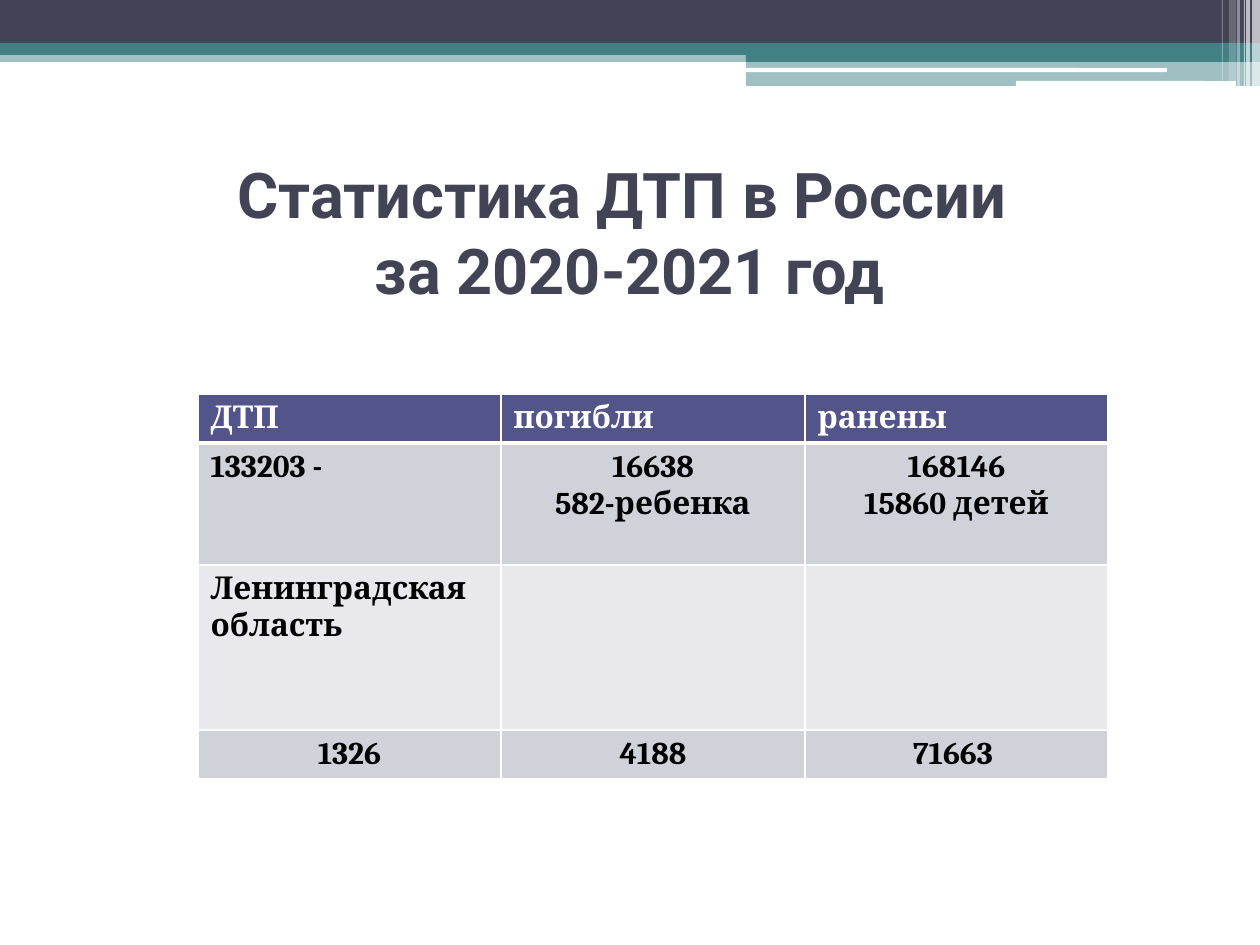
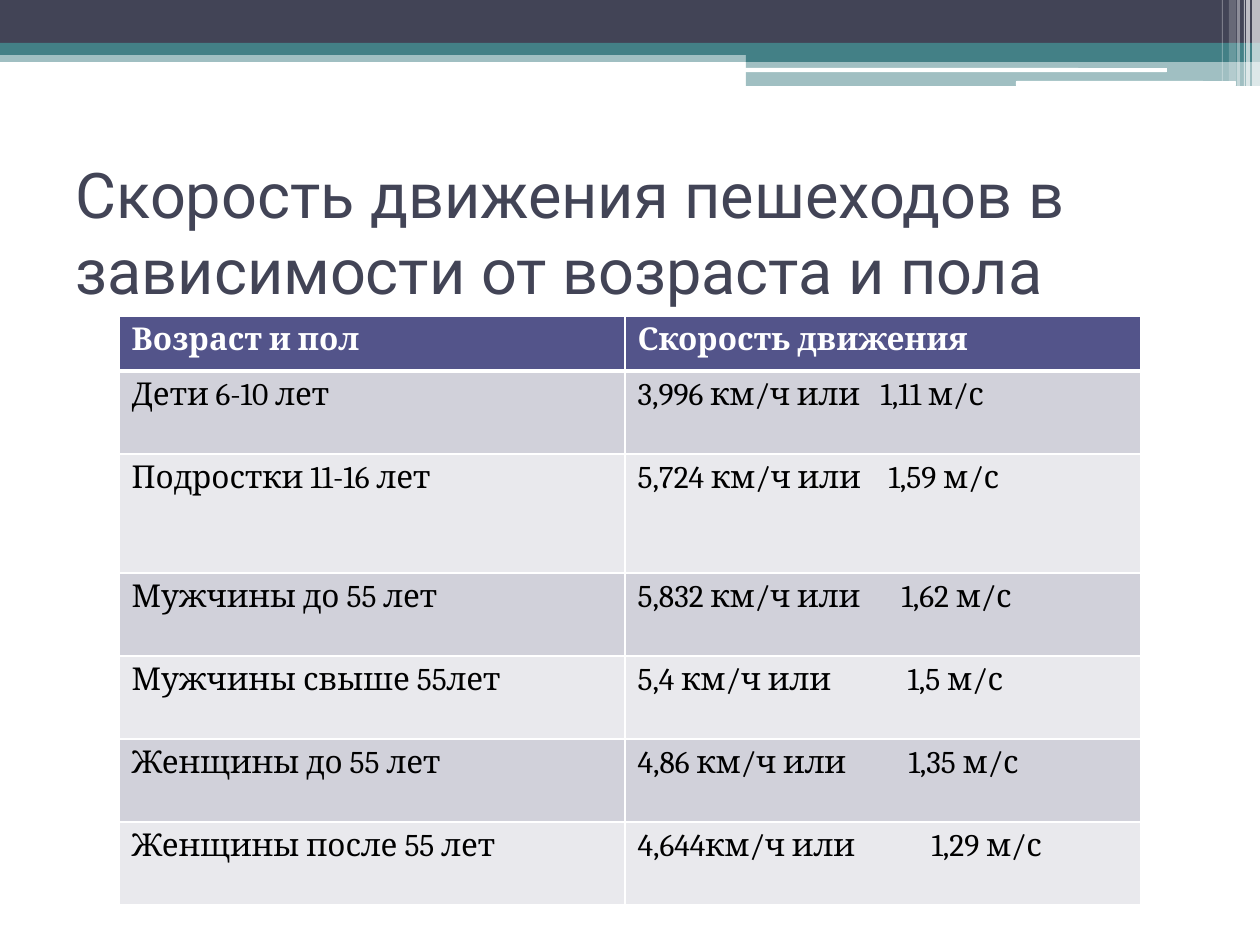
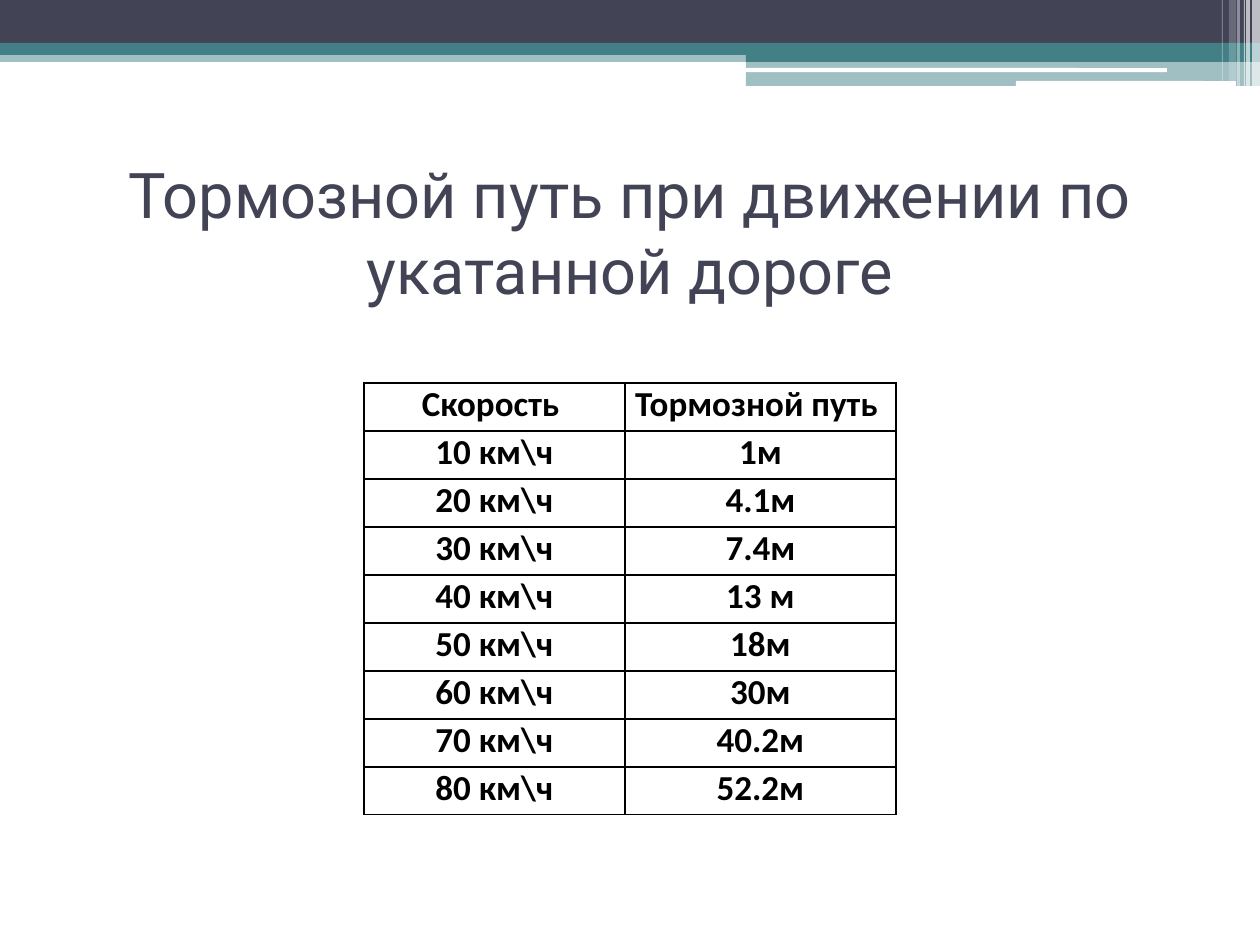
import lxml.etree
import pptx
import pptx.dml.color
import pptx.enum.shapes
import pptx.enum.text
import pptx.oxml.ns
import pptx.util

INK, TEAL, WHITE, BLACK = "424456", "438086", "FFFFFF", "000000"
HEADER, BAND_DARK, BAND_LIGHT = "53548A", "D1D1DA", "E9E9ED"
RECT = pptx.enum.shapes.MSO_SHAPE.RECTANGLE
ROUND = pptx.enum.shapes.MSO_SHAPE.ROUNDED_RECTANGLE
CENTER = pptx.enum.text.PP_ALIGN.CENTER
LEFT = pptx.enum.text.PP_ALIGN.LEFT
qn = pptx.oxml.ns.qn


def px(length):
    return pptx.util.Emu(round(length * 914400 / 126))


def rgb(color):
    return pptx.dml.color.RGBColor.from_string(color)


deck = pptx.Presentation()
deck.slide_width, deck.slide_height = px(1260), px(945)
layout = deck.slide_layouts[5]

# Shared top bands: shape, left, top, width, height, colour, opacity in percent
bands = [
    (RECT, 0, 50, 1260, 12, TEAL, 50),
    (RECT, 0, 0, 1260, 43, INK, 100),
    (RECT, 0, 43, 1260, 12, TEAL, 100),
    (RECT, 746, 49, 514, 13, TEAL, 100),
    (RECT, 746, 61, 514, 25, TEAL, 50),
    (ROUND, 745, 68, 422, 4, WHITE, 100),
    (ROUND, 1016, 81, 220, 5, WHITE, 100),
    (RECT, 1252, 0, 8, 86, WHITE, 65),
    (RECT, 1246, 0, 4, 86, WHITE, 65),
    (RECT, 1244, 0, 1, 86, WHITE, 60),
    (RECT, 1237, 0, 3, 86, WHITE, 40),
    (RECT, 1229, 0, 7, 81, WHITE, 20),
    (RECT, 1222, 0, 1, 81, WHITE, 30),
]

# Slide contents; centred cells are (row, column), tabs are distances per row
slides = [
    {
        "title": ["Статистика ДТП в России ", "за 2020-2021 год"],
        "title_align": CENTER, "title_bold": True,
        "origin": (198, 394), "columns": [303, 304, 303], "heights": [48, 122, 165, 49],
        "font": "Cambria", "size": 18, "body_bold": True, "banded": True,
        "cells": [
            ["ДТП", "погибли", "ранены"],
            ["133203 -", "16638\n582-ребенка", "168146\n15860 детей"],
            ["Ленинградская область", "", ""],
            ["1326", "4188", "71663 "],
        ],
        "centred": [(1, 1), (1, 2), (3, 0), (3, 1), (3, 2)], "tabs": {},
    },
    {
        "title": ["Скорость движения пешеходов в зависимости от возраста и пола"],
        "title_align": LEFT, "title_bold": False,
        "origin": (119, 316), "columns": [506, 516], "heights": [55, 83, 119] + [83] * 4,
        "font": "Cambria", "size": 18, "body_bold": False, "banded": True,
        "cells": [
            ["Возраст и пол", "Скорость движения"],
            ["Дети 6-10 лет", "3,996 км/ч или\t1,11 м/с"],
            ["Подростки 11-16 лет", "5,724 км/ч или\t1,59 м/с"],
            ["Мужчины до 55 лет", "5,832 км/ч или\t1,62 м/с"],
            ["Мужчины свыше 55лет", "5,4 км/ч или\t1,5 м/с"],
            ["Женщины до 55 лет", "4,86 км/ч или\t1,35 м/с"],
            ["Женщины после 55 лет", "4,644км/ч или\t1,29 м/с"],
        ],
        "centred": [], "tabs": {1: 243, 2: 251, 3: 264, 4: 270, 5: 271, 6: 294},
    },
    {
        "title": ["Тормозной путь при движении по укатанной дороге"],
        "title_align": CENTER, "title_bold": False,
        "origin": (364, 383), "columns": [261, 271], "heights": [48] * 9,
        "font": "Calibri", "size": 20, "body_bold": True, "banded": False,
        "cells": [
            ["Скорость ", "Тормозной путь "],
            ["10 км\\ч", "1м"],
            ["20 км\\ч", "4.1м"],
            ["30 км\\ч", "7.4м"],
            ["40 км\\ч", "13 м"],
            ["50 км\\ч", "18м"],
            ["60 км\\ч", "30м"],
            ["70 км\\ч", "40.2м"],
            ["80 км\\ч", "52.2м"],
        ],
        "centred": [(row, column) for row in range(9) for column in range(2)], "tabs": {},
    },
]

for number, content in enumerate(slides):
    page = deck.slides.add_slide(layout)

    # Bands are drawn once and moved to the layout
    if number == 0:
        for index, (kind, left, top, width, height, color, opacity) in enumerate(bands):
            band = page.shapes.add_shape(kind, px(left), px(top), px(width), px(height))
            band.shadow.inherit = False
            band.line.fill.background()
            band.fill.solid()
            band.fill.fore_color.rgb = rgb(color)
            if opacity < 100:
                tint = band.element.spPr.find(".//" + qn("a:srgbClr"))
                lxml.etree.SubElement(tint, qn("a:alpha")).set("val", str(opacity * 1000))
            band.element.find(".//" + qn("p:cNvPr")).set("id", str(100 + index))
            layout.shapes.element.append(band.element)

    # Title
    title = page.shapes.title
    title.left, title.top, title.width, title.height = px(63), px(158), px(1134), px(147)
    frame = title.text_frame
    frame.word_wrap = True
    frame.auto_size = pptx.enum.text.MSO_AUTO_SIZE.NONE
    frame.vertical_anchor = pptx.enum.text.MSO_ANCHOR.MIDDLE
    para = frame.paragraphs[0]
    para.alignment = content["title_align"]
    for index, line in enumerate(content["title"]):
        if index:
            para.add_line_break()
        span = para.add_run()
        span.text = line
        span.font.name = "Roboto"
        span.font.size = pptx.util.Pt(36)
        span.font.bold = content["title_bold"]
        span.font.color.rgb = rgb(INK)

    # Table grid
    columns, heights, banded = content["columns"], content["heights"], content["banded"]
    left, top = content["origin"]
    table = page.shapes.add_table(len(heights), len(columns), px(left), px(top),
                                  px(sum(columns)), px(sum(heights))).table
    table.first_row = table.horz_banding = banded
    for column, width in zip(table.columns, columns):
        column.width = px(width)
    for row, height in zip(table.rows, heights):
        row.height = px(height)

    # Table cells
    for r, texts in enumerate(content["cells"]):
        for c, text in enumerate(texts):
            cell = table.cell(r, c)
            header = banded and r == 0
            if banded:
                cell.fill.solid()
                cell.fill.fore_color.rgb = rgb(HEADER if header else BAND_DARK if r % 2 else BAND_LIGHT)
            else:
                cell.fill.background()
                cell.margin_left = cell.margin_right = px(9)
                cell.margin_top = cell.margin_bottom = 0

            # Borders, heavier below the header of a banded table
            for index, side in enumerate(("lnL", "lnR", "lnT", "lnB")):
                heavy = banded and (r, side) in ((0, "lnB"), (1, "lnT"))
                border = lxml.etree.Element(qn("a:" + side), w=str(pptx.util.Pt(3 if heavy else 1)))
                paint = lxml.etree.SubElement(border, qn("a:solidFill"))
                lxml.etree.SubElement(paint, qn("a:srgbClr")).set("val", WHITE if banded else BLACK)
                cell.fill  # the cell properties exist once a fill is set
                cell._tc.tcPr.insert(index, border)

            # Text
            if not text:
                continue
            for index, line in enumerate(text.split("\n")):
                frame = cell.text_frame
                para = frame.add_paragraph() if index else frame.paragraphs[0]
                para.alignment = CENTER if (r, c) in content["centred"] else LEFT
                span = para.add_run()
                span.text = line
                span.font.name = content["font"]
                span.font.size = pptx.util.Pt(content["size"])
                span.font.bold = header or content["body_bold"]
                span.font.color.rgb = rgb(WHITE if header else BLACK)
                if "\t" in line:
                    stops = lxml.etree.SubElement(para._p.get_or_add_pPr(), qn("a:tabLst"))
                    lxml.etree.SubElement(stops, qn("a:tab"), pos=str(px(content["tabs"][r])), algn="l")

deck.save("out.pptx")
